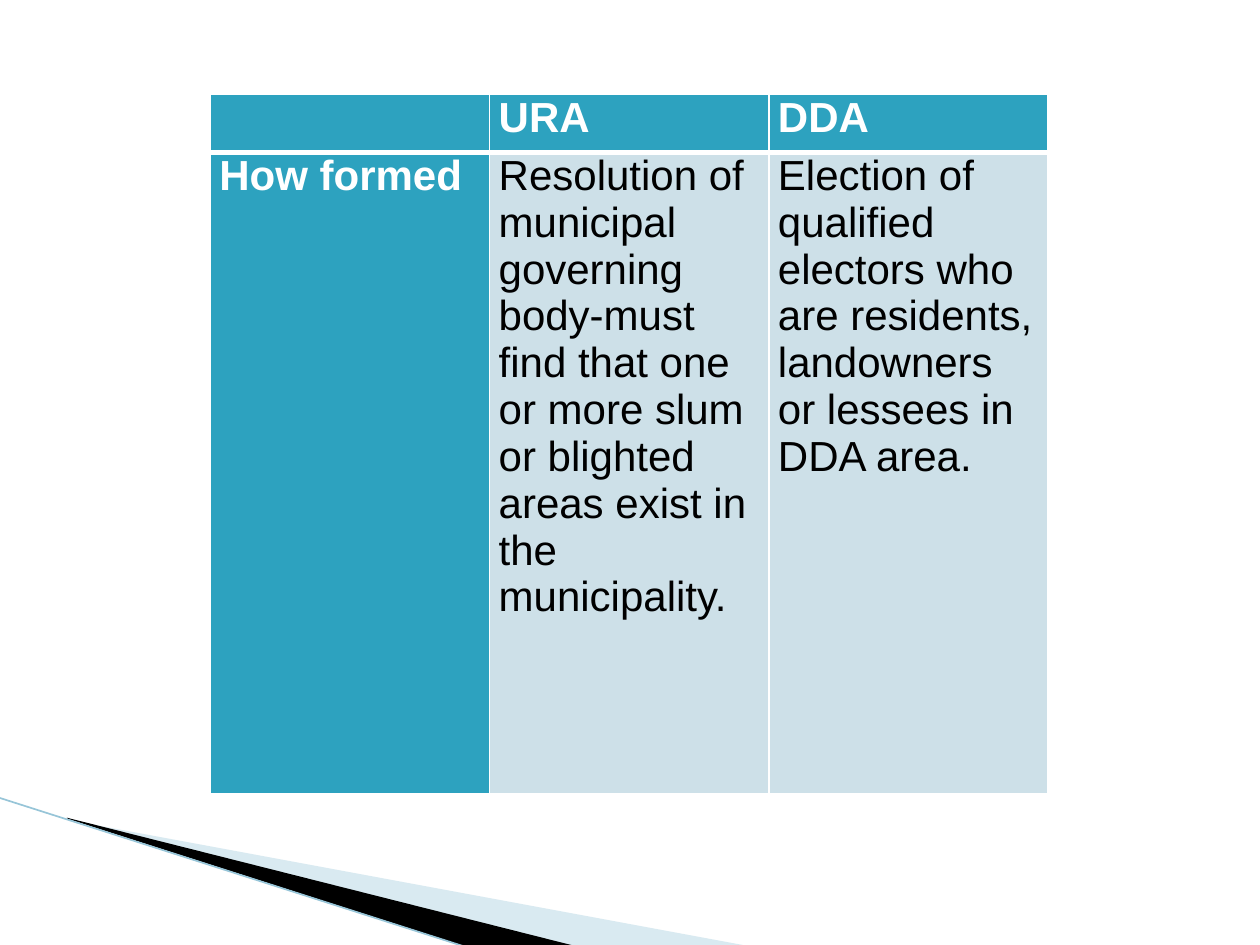
import pptx
import pptx.dml.color
import pptx.oxml
import pptx.oxml.ns
import pptx.enum.shapes
import pptx.util
from lxml import etree

Pt = pptx.util.Pt
qn = pptx.oxml.ns.qn

HUES = {
    "head": "2DA2BF",
    "cell": "CDE0E8",
    "white": "FFFFFF",
    "black": "000000",
    "mist": "A0CBDC",
    "edge": "97C5D8",
}
FONT = "Arial"
ROWS = [
    ["", "URA", "DDA"],
    [
        "How formed",
        "Resolution of municipal governing body-must find that one or more "
        "slum or blighted areas exist in the municipality.",
        "Election of qualified electors who are residents, landowners or "
        "lessees in DDA area.",
    ],
]


def rgb(hue):
    return pptx.dml.color.RGBColor.from_string(HUES[hue])


class Deck:
    """Holds the style and the current slide."""

    def __init__(self, slide, font, size):
        self.slide, self.font, self.size = slide, font, size

    def wedge(self, points, hue, alpha=100):
        start, *rest = [(Pt(x), Pt(y)) for x, y in points]
        maker = self.slide.shapes.build_freeform(*start, scale=1.0)
        maker.add_line_segments(rest, close=True)
        shape = maker.convert_to_shape()
        shape.shadow.inherit = False
        shape.fill.solid()
        shape.fill.fore_color.rgb = rgb(hue)
        shape.line.fill.background()
        if alpha < 100:
            color = shape.fill._xPr.find(".//" + qn("a:srgbClr"))
            etree.SubElement(color, qn("a:alpha"), val=str(alpha * 1000))

    def line(self, start, end, hue, width):
        kind = pptx.enum.shapes.MSO_CONNECTOR.STRAIGHT
        line = self.slide.shapes.add_connector(
            kind, *[Pt(v) for v in (*start, *end)])
        line.line.color.rgb = rgb(hue)
        line.line.width = Pt(width)
        etree.SubElement(line._element.spPr, qn("a:effectLst"))

    def border(self, cell, widths):
        """Add white borders; widths maps L, R, T, B to points."""
        props = cell._tc.get_or_add_tcPr()
        for spot, (side, width) in enumerate(widths.items()):
            edge = etree.Element(qn("a:ln" + side), w=str(Pt(width)))
            fill = etree.SubElement(edge, qn("a:solidFill"))
            etree.SubElement(fill, qn("a:srgbClr"), val=HUES["white"])
            props.insert(spot, edge)

    def fill(self, cell, text, head):
        cell.margin_left = cell.margin_right = Pt(5.2)
        cell.margin_top = cell.margin_bottom = 0
        cell.fill.solid()
        cell.fill.fore_color.rgb = rgb("head" if head else "cell")
        cell.text_frame.text = text
        font = cell.text_frame.paragraphs[0].font
        font.name, font.size, font.bold = self.font, Pt(self.size), head
        font.color.rgb = rgb("white" if head else "black")

    def table(self, rows, left, top, width, heights):
        frame = self.slide.shapes.add_table(
            len(rows), len(rows[0]), Pt(left), Pt(top), Pt(width),
            Pt(sum(heights)))
        table = frame.table
        table.first_col = True
        for r, texts in enumerate(rows):
            table.rows[r].height = Pt(heights[r])
            for c, text in enumerate(texts):
                cell = table.cell(r, c)
                self.fill(cell, text, head=r == 0 or c == 0)
                self.border(cell, {"L": 1, "R": 1, "T": 3 if r == 1 else 1,
                                   "B": 3 if r == 0 else 1})


def main():
    prs = pptx.Presentation()
    prs.slide_width, prs.slide_height = Pt(720), Pt(540)
    deck = Deck(prs.slides.add_slide(prs.slide_layouts[6]), FONT, 24)
    deck.wedge([(39.6, 468.7), (428.4, 540.7), (328.3, 540.7), (39.6, 468)],
               "mist", 40)
    deck.wedge([(38.2, 467.3), (329, 540.7), (267.8, 541.4), (38.9, 468)],
               "black")
    deck.line((-0.7, 455.8), (267.1, 541.4), "edge", 0.95)
    deck.table(ROWS, 120.2, 54, 478.8, [33.1, 366.5])
    prs.save("out.pptx")


if __name__ == "__main__":
    main()
